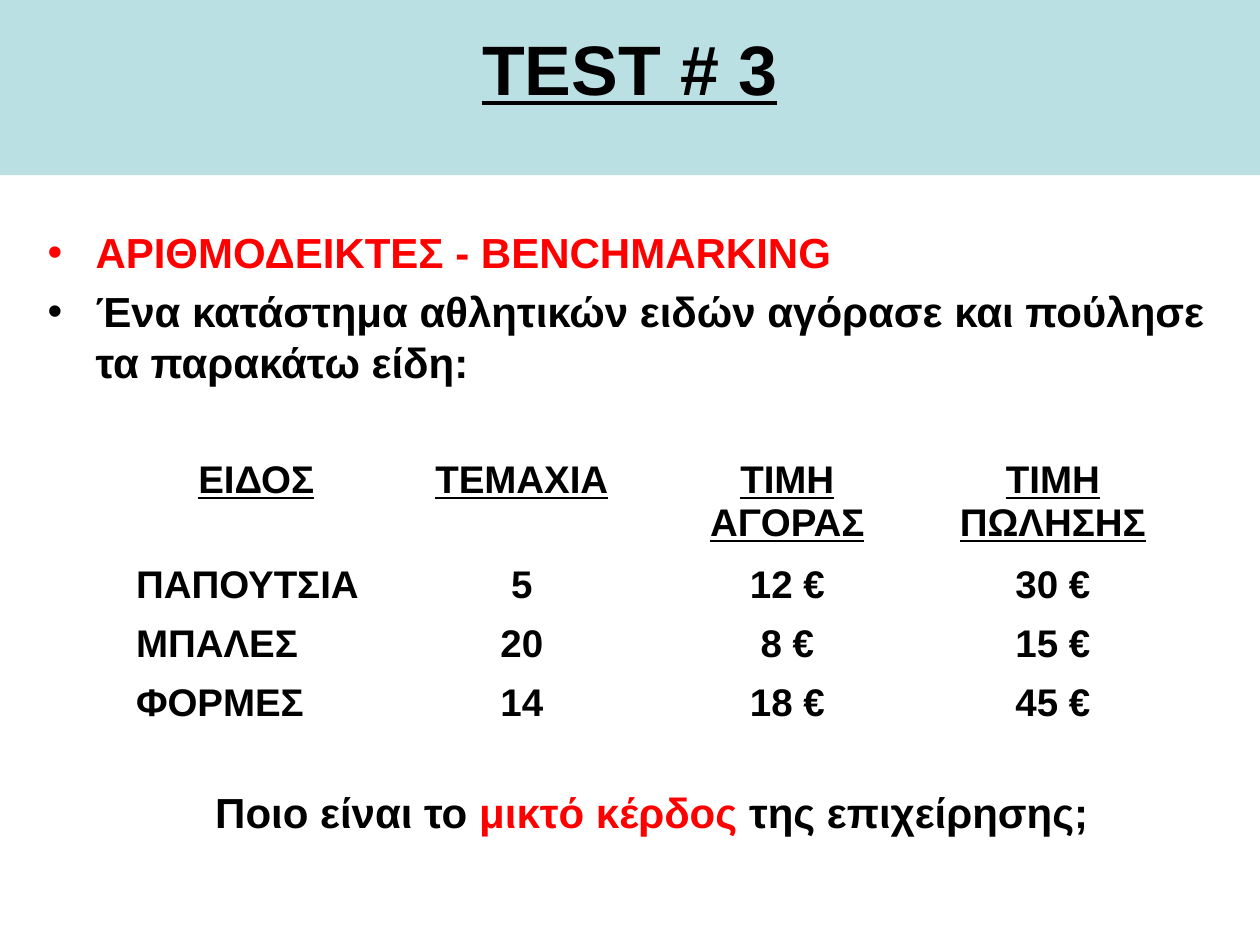
from lxml.etree import SubElement
from pptx import Presentation
from pptx.dml.color import RGBColor
from pptx.enum.shapes import MSO_SHAPE as Shape
from pptx.enum.text import MSO_ANCHOR as Anchor, MSO_AUTO_SIZE as AutoSize, PP_ALIGN as Align
from pptx.oxml.ns import qn
from pptx.util import Inches, Pt

BLACK = RGBColor(0, 0, 0)
RED = RGBColor(0xFF, 0, 0)
PALE_TEAL = RGBColor(0xBB, 0xE0, 0xE3)


def write(paragraph, text, size=24, color=BLACK, underline=False, align=Align.LEFT):
    paragraph.alignment = align
    run = paragraph.add_run()
    run.text = text
    run.font.name = "Arial"
    run.font.size = Pt(size)
    run.font.bold = True
    run.font.underline = underline
    run.font.color.rgb = color


deck = Presentation()
deck.slide_width, deck.slide_height = Inches(10), Inches(7.5)
slide = deck.slides.add_slide(deck.slide_layouts[6])

banner = slide.shapes.add_shape(Shape.RECTANGLE, 0, 0, deck.slide_width, Inches(1.39))
banner.shadow.inherit = False
banner.fill.solid()
banner.fill.fore_color.rgb = PALE_TEAL
banner.line.fill.background()
heading = banner.text_frame
heading.vertical_anchor = Anchor.TOP
heading.margin_top = Inches(0.2)
write(heading.paragraphs[0], "TEST # 3", size=40, underline=True, align=Align.CENTER)

intro = slide.shapes.add_textbox(Inches(0.28), Inches(1.75), Inches(9.45), Inches(4.95)).text_frame
intro.word_wrap = True
points = [
    ("ΑΡΙΘΜΟΔΕΙΚΤΕΣ - BENCHMARKING", RED),
    ("Ένα κατάστημα αθλητικών ειδών αγόρασε και πούλησε τα παρακάτω είδη:", BLACK),
]
for i, (point, color) in enumerate(points):
    paragraph = intro.add_paragraph() if i else intro.paragraphs[0]
    write(paragraph, point, color=color)
    paragraph.space_before = Pt(5)
    bullet = paragraph._p.get_or_add_pPr()
    bullet.set("marL", str(Inches(0.38)))
    bullet.set("indent", str(-Inches(0.38)))
    SubElement(bullet, qn("a:buFont")).set("typeface", "Arial")
    SubElement(bullet, qn("a:buChar")).set("char", "•")

goods = [
    ("ΕΙΔΟΣ", "ΤΕΜΑΧΙΑ", "ΤΙΜΗ ΑΓΟΡΑΣ", "ΤΙΜΗ ΠΩΛΗΣΗΣ"),
    ("ΠΑΠΟΥΤΣΙΑ", "5", "12 €", "30 €"),
    ("ΜΠΑΛΕΣ", "20", "8 €", "15 €"),
    ("ΦΟΡΜΕΣ", "14", "18 €", "45 €"),
]
prices = slide.shapes.add_table(
    len(goods), len(goods[0]), Inches(0.98), Inches(3.59), Inches(8.43), Inches(2.23)
).table
prices.first_row = False
prices.horz_banding = False
for r, entries in enumerate(goods):
    prices.rows[r].height = Inches(0.47 if r else 0.83)
    for c, entry in enumerate(entries):
        cell = prices.cell(r, c)
        cell.fill.background()
        is_item = r > 0 and c == 0
        write(cell.text_frame.paragraphs[0], entry, size=22, underline=r == 0,
              align=Align.LEFT if is_item else Align.CENTER)

question = slide.shapes.add_textbox(Inches(1.61), Inches(6.19), Inches(7.38), Inches(0.5)).text_frame
question.word_wrap = False
question.auto_size = AutoSize.SHAPE_TO_FIT_TEXT
question.vertical_anchor = Anchor.MIDDLE
for phrase, color in [
    ("Ποιο είναι το ", BLACK),
    ("μικτό κέρδος ", RED),
    ("της επιχείρησης;", BLACK),
]:
    write(question.paragraphs[0], phrase, color=color)

deck.save("out.pptx")
